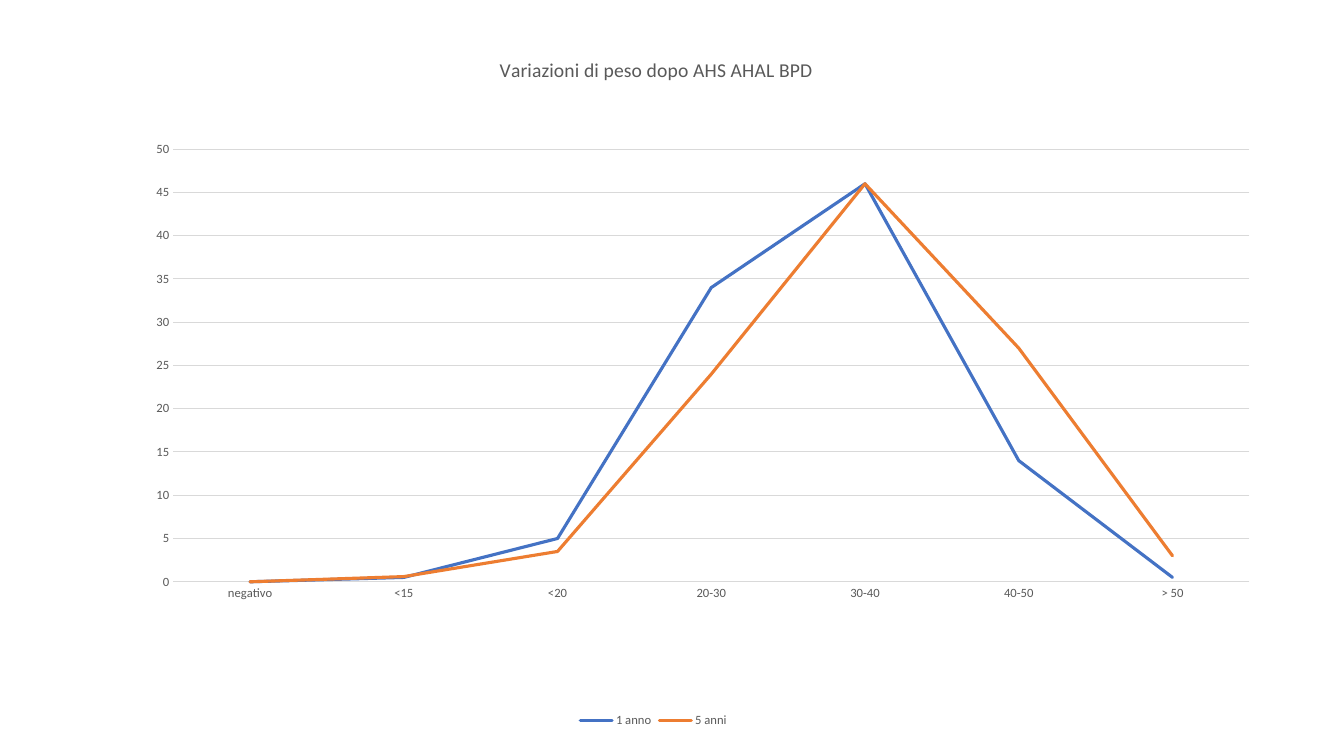
from lxml import etree
from pptx import Presentation
from pptx import util as u
from pptx.chart.data import CategoryChartData
from pptx.dml.color import RGBColor
from pptx.enum import chart as charts
from pptx.oxml.ns import qn

COLORS = {"text": "595959", "grid": "D9D9D9", "1 anno": "4472C4", "5 anni": "ED7D31"}
WEIGHT_CHANGES = {
    "1 anno": (0, 0.5, 5, 34, 46, 14, 0.5),
    "5 anni": (0, 0.6, 3.5, 24, 46, 27, 3),
}


def set_layout(parent, index, **settings):
    """Place a chart part by fractions of the chart area."""
    for old_layout in parent.findall(qn("c:layout")):
        parent.remove(old_layout)
    layout = etree.Element(qn("c:layout"))
    manual = etree.SubElement(layout, qn("c:manualLayout"))
    for name, value in settings.items():
        etree.SubElement(manual, qn(f"c:{name}")).set("val", str(value))
    parent.insert(index, layout)


def style_line(line, color, width):
    line.color.rgb = RGBColor.from_string(COLORS[color])
    line.width = u.Pt(width)


presentation = Presentation()
presentation.slide_width = u.Cm(33.87)
presentation.slide_height = u.Cm(19.05)
slide = presentation.slides.add_slide(presentation.slide_layouts[6])

# Line chart
data = CategoryChartData()
data.categories = ["negativo", "<15", "<20", "20-30", "30-40", "40-50", "> 50"]
for name, values in WEIGHT_CHANGES.items():
    data.add_series(name, values)
chart = slide.shapes.add_chart(
    charts.XL_CHART_TYPE.LINE, u.Cm(1.45), u.Cm(0.71), u.Cm(30.05), u.Cm(17.73), data
).chart
chart.font.name = "Calibri"
chart.font.size = u.Pt(9)
chart.font.color.rgb = RGBColor.from_string(COLORS["text"])
set_layout(chart._chartSpace.chart.plotArea, 0, layoutTarget="inner",
           xMode="edge", yMode="edge", x=0.097, y=0.172, w=0.903, h=0.615)

# Title
title = chart.chart_title
paragraph = title.text_frame.paragraphs[0]
paragraph.text = "Variazioni di peso dopo AHS AHAL BPD"
paragraph.font.name = "Calibri"
paragraph.font.size = u.Pt(14)
paragraph.font.bold = False
paragraph.font.color.rgb = RGBColor.from_string(COLORS["text"])
set_layout(title._element, 1, xMode="edge", yMode="edge", x=0.368, y=0.035)
title.include_in_layout = False

# Legend
chart.has_legend = True
chart.legend.position = charts.XL_LEGEND_POSITION.BOTTOM
chart.legend.include_in_layout = False

# Axes
for axis in (chart.category_axis, chart.value_axis):
    axis.major_tick_mark = axis.minor_tick_mark = charts.XL_TICK_MARK.NONE
style_line(chart.category_axis.format.line, "grid", 0.75)
value_axis = chart.value_axis
value_axis.format.line.fill.background()
style_line(value_axis.major_gridlines.format.line, "grid", 0.75)
value_axis.minimum_scale, value_axis.maximum_scale = 0, 50
value_axis.major_unit = 5

# Series
chart.plots[0].vary_by_categories = False
for series in chart.plots[0].series:
    series.smooth = False
    series.marker.style = charts.XL_MARKER_STYLE.NONE
    style_line(series.format.line, series.name, 2.25)
    series.format.line._ln.set("cap", "rnd")

presentation.save("out.pptx")
